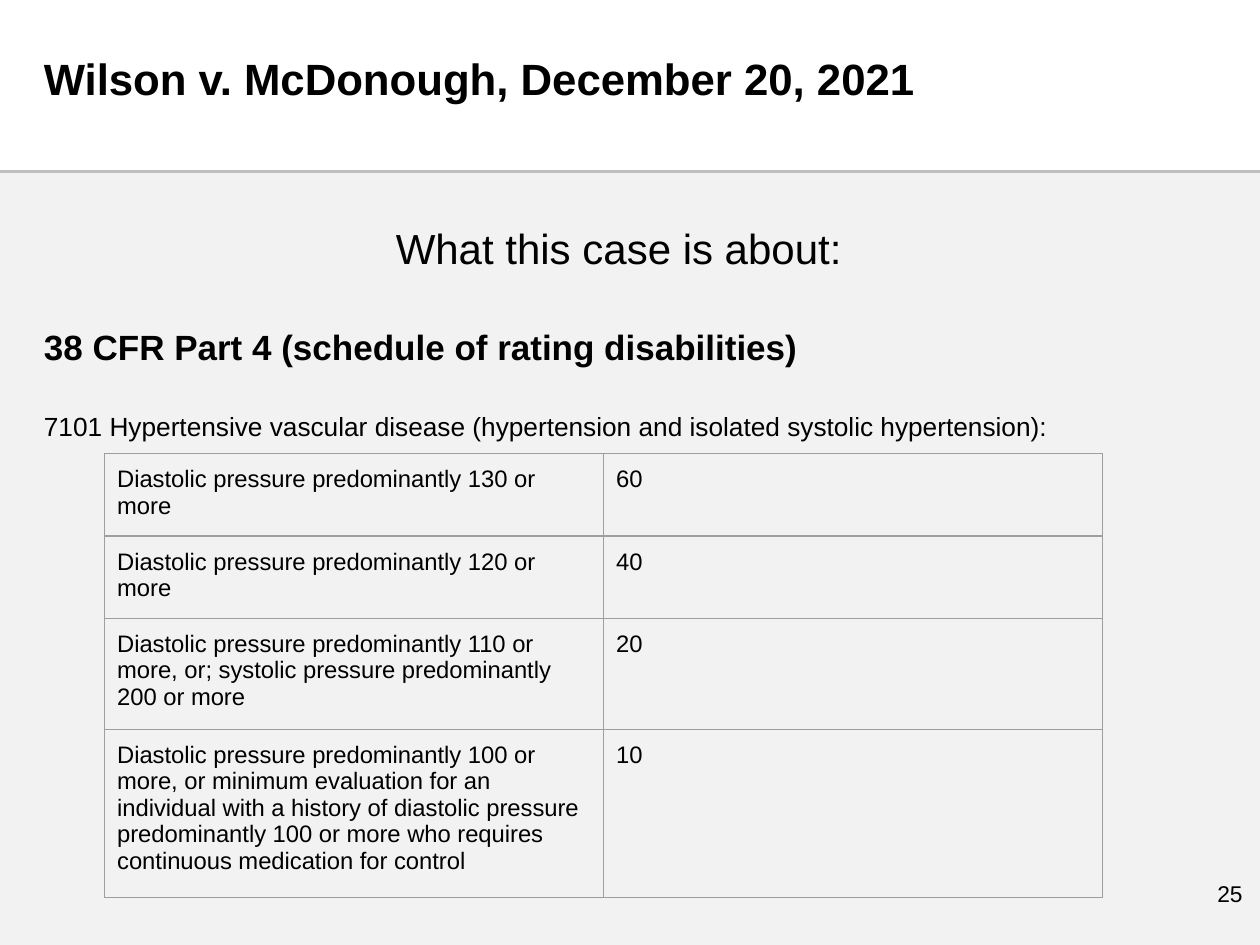
from dataclasses import dataclass
from lxml import etree
from pptx import Presentation
from pptx.dml.color import RGBColor
from pptx.enum import shapes, text
from pptx.oxml import ns
from pptx.util import Inches, Pt


@dataclass(frozen=True)
class Theme:
    font: str = "Arial"
    ink: str = "000000"
    panel: str = "F2F2F2"
    rule: str = "BFBFBF"
    grid: str = "9E9E9E"
    title: float = 25
    lead: float = 24
    head: float = 20
    note: float = 15
    cell: float = 13.6
    page: float = 13


THEME = Theme()
ALIGN = text.PP_ALIGN
RATES = [
    ("Diastolic pressure predominantly 130 or more", "60", 0.63),
    ("Diastolic pressure predominantly 120 or more", "40", 0.63),
    ("Diastolic pressure predominantly 110 or more, or; systolic pressure "
     "predominantly 200 or more", "20", 0.86),
    ("Diastolic pressure predominantly 100 or more, or minimum evaluation for an "
     "individual with a history of diastolic pressure predominantly 100 or more who "
     "requires continuous medication for control", "10", 1.29),
]


def color(code):
    return RGBColor.from_string(code)


def write(para, words, size, bold=False, align=ALIGN.LEFT, before=0):
    para.text = words
    para.alignment = align
    para.space_before = Pt(before)
    para.font.name = THEME.font
    para.font.size = Pt(size)
    para.font.bold = bold
    para.font.color.rgb = color(THEME.ink)


def add_text(slide, box, lines):
    frame = slide.shapes.add_textbox(*map(Inches, box)).text_frame
    frame.word_wrap = True
    for i, line in enumerate(lines):
        para = frame.paragraphs[0] if i == 0 else frame.add_paragraph()
        write(para, **line)
    return frame


def add_panel(slide, box):
    left, top, width, height = box
    panel = slide.shapes.add_shape(shapes.MSO_SHAPE.RECTANGLE, *map(Inches, box))
    panel.shadow.inherit = False
    panel.fill.solid()
    panel.fill.fore_color.rgb = color(THEME.panel)
    panel.line.fill.background()
    rule = slide.shapes.add_connector(
        shapes.MSO_CONNECTOR.STRAIGHT,
        *map(Inches, (left, top - 0.01, left + width, top - 0.01)))
    rule.line.color.rgb = color(THEME.rule)
    rule.line.width = Pt(1.5)
    etree.SubElement(rule._element.spPr, ns.qn("a:effectLst"))


def add_title(slide, box):
    frame = add_text(slide, box, [
        dict(words="Wilson v. McDonough, December 20, 2021",
             size=THEME.title, bold=True)])
    frame.paragraphs[0].line_spacing = 0.9


def add_body(slide, box):
    add_text(slide, box, [
        dict(words="What this case is about:", size=THEME.lead, align=ALIGN.CENTER),
        dict(words="38 CFR Part 4 (schedule of rating disabilities)",
             size=THEME.head, bold=True, before=30),
        dict(words="7101 Hypertensive vascular disease "
                   "(hypertension and isolated systolic hypertension):",
             size=THEME.note, before=24.5),
    ])


def add_edges(cell):
    props = cell._tc.get_or_add_tcPr()
    for i, side in enumerate(("lnL", "lnR", "lnT", "lnB")):
        edge = etree.Element(ns.qn(f"a:{side}"), w=str(Pt(0.75)))
        fill = etree.SubElement(edge, ns.qn("a:solidFill"))
        etree.SubElement(fill, ns.qn("a:srgbClr"), val=THEME.grid)
        props.insert(i, edge)


def add_rates(slide, box):
    table = slide.shapes.add_table(len(RATES), 2, *map(Inches, box)).table
    table.first_row = table.horz_banding = False
    for col in table.columns:
        col.width = Inches(box[2] / 2)
    for row, (*words, height) in zip(table.rows, RATES):
        row.height = Inches(height)
        for cell, word in zip(row.cells, words):
            cell.fill.background()
            cell.margin_left = cell.margin_right = Inches(0.1)
            cell.margin_top = cell.margin_bottom = Inches(0.1)
            write(cell.text_frame.paragraphs[0], word, THEME.cell)
            add_edges(cell)


def add_page(slide, box):
    add_text(slide, box, [dict(words="25", size=THEME.page, align=ALIGN.RIGHT)])


def main():
    deck = Presentation()
    deck.slide_width, deck.slide_height = Inches(10), Inches(7.5)
    slide = deck.slides.add_slide(deck.slide_layouts[6])
    add_panel(slide, (0, 1.37, 10, 6.13))
    add_title(slide, (0.25, 0.41, 8.5, 1.61))
    add_body(slide, (0.25, 1.72, 9.32, 4.95))
    add_rates(slide, (0.83, 3.6, 7.92, sum(rate[2] for rate in RATES)))
    add_page(slide, (9.36, 6.93, 0.6, 0.57))
    deck.save("out.pptx")


if __name__ == "__main__":
    main()
